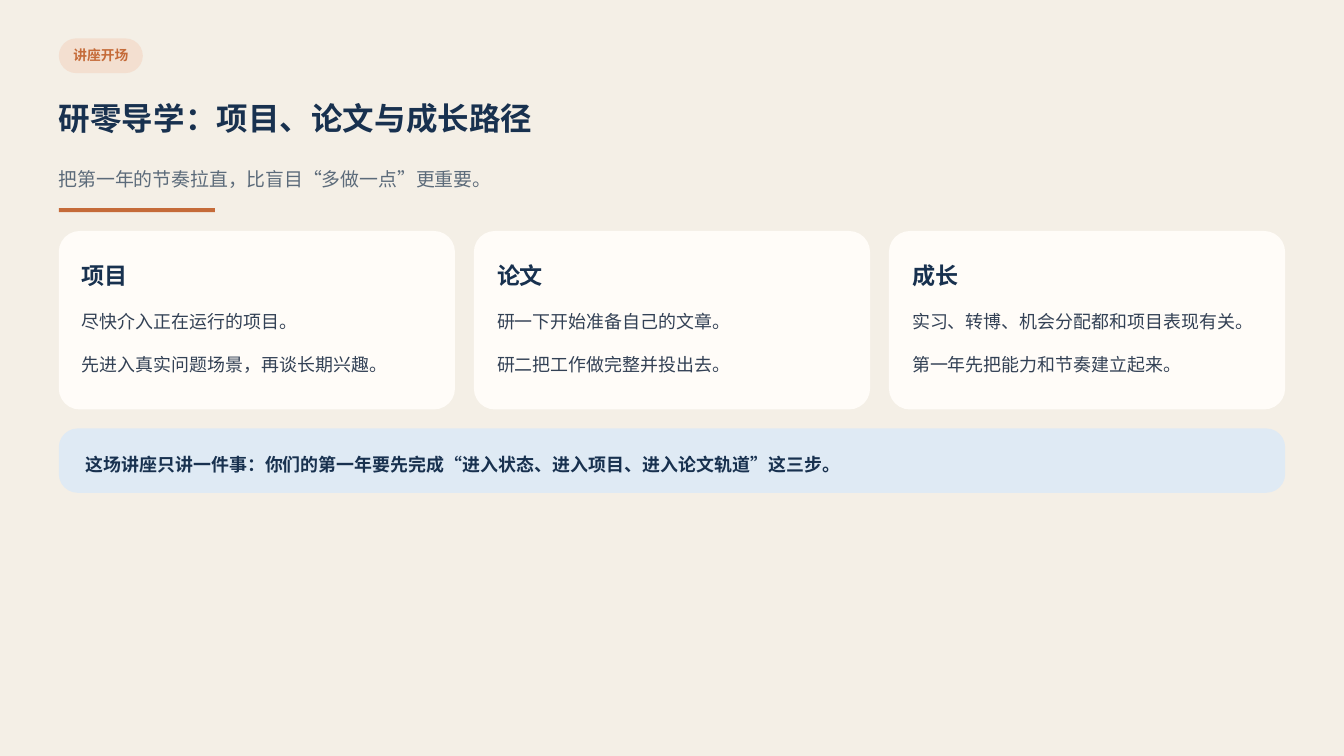
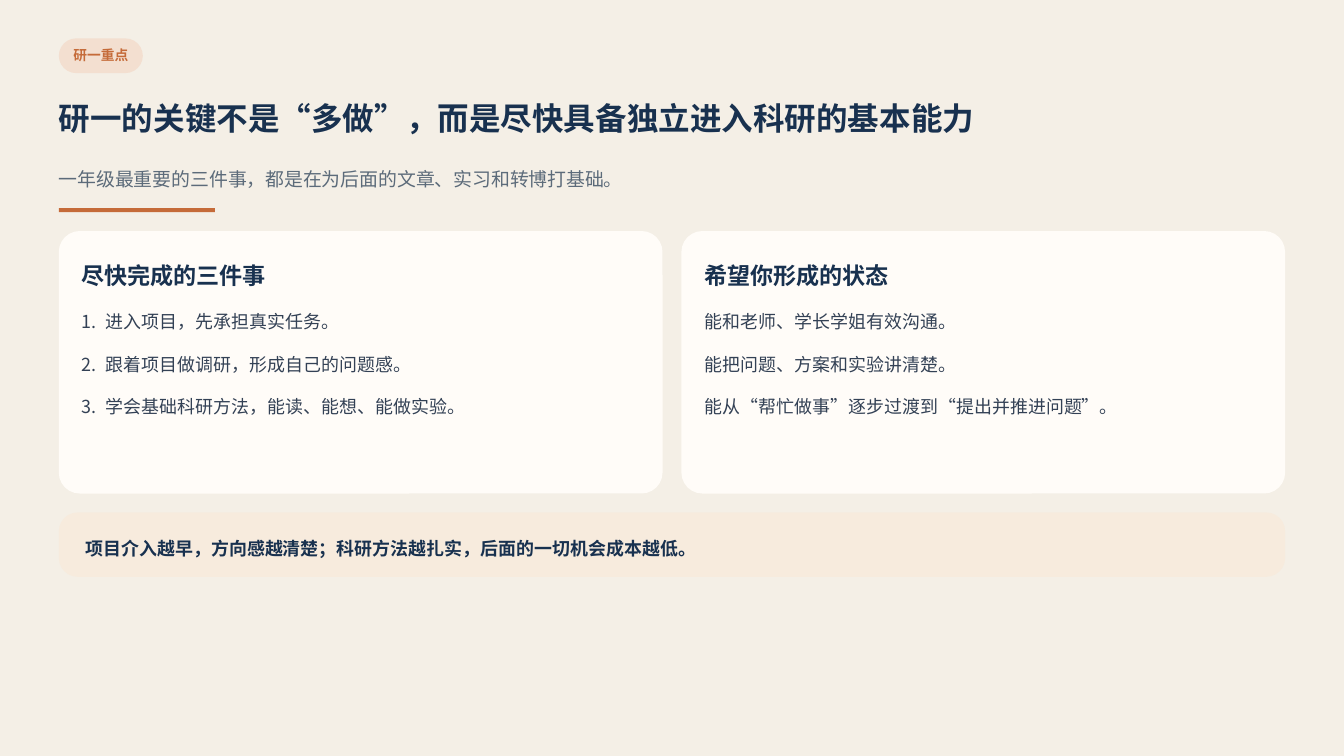
from pptx import Presentation
from pptx.dml.color import RGBColor
from pptx.enum.shapes import MSO_SHAPE
from pptx.enum.text import MSO_ANCHOR, MSO_AUTO_SIZE, PP_ALIGN
from pptx.oxml.ns import qn
from pptx.util import Pt

FONT = "Noto Sans CJK SC"
PAPER, CARD = "F4EFE6", "FFFCF8"
NAVY, SLATE, INK = "18314F", "5C6B7A", "334155"
ORANGE, PEACH = "C56B39", "F3DFD0"
BLUE_TINT, ORANGE_TINT = "DFEAF4", "F7EBDD"
LEFT, WIDTH, GAP = 42, 876, 13.5
CARD_TOP, CARD_PADDING = 165, 16.5
CALLOUT_HEIGHT = 46


def color(value):
    """Turn a hex string into a colour."""
    return RGBColor.from_string(value)


class Deck:
    """Hold the shared style and the current slide."""

    def __init__(self):
        """Start a widescreen presentation on a paper background."""
        self.presentation = Presentation()
        self.presentation.slide_width = Pt(960)
        self.presentation.slide_height = Pt(540)
        fill = self.presentation.slide_master.background.fill
        fill.solid()
        fill.fore_color.rgb = color(PAPER)
        self.slide = None

    def fill_text(self, shape, lines, size, text_color, bold=False, spacing=1.0,
                  margins=(0, 0, 0, 0), anchor=MSO_ANCHOR.TOP,
                  align=PP_ALIGN.LEFT, numbered=False):
        """Fill a shape with one paragraph for each line."""
        frame = shape.text_frame
        frame.word_wrap = True
        frame.auto_size = MSO_AUTO_SIZE.NONE
        frame.vertical_anchor = anchor
        (frame.margin_left, frame.margin_top,
         frame.margin_right, frame.margin_bottom) = map(Pt, margins)
        frame.text = "\n".join(lines)
        for paragraph in frame.paragraphs:
            paragraph.alignment = align
            paragraph.line_spacing = spacing
            if numbered:
                self.number(paragraph)
            for run in paragraph.runs:
                run.font.name = FONT
                run.font.size = Pt(size)
                run.font.bold = bold
                run.font.color.rgb = color(text_color)
                properties = run._r.get_or_add_rPr()
                properties.append(properties.makeelement(qn("a:ea"), {"typeface": FONT}))

    def number(self, paragraph):
        """Give a paragraph automatic numbering with a hanging indent."""
        properties = paragraph._p.get_or_add_pPr()
        properties.set("marL", str(Pt(17)))
        properties.set("indent", str(-Pt(17)))
        properties.append(properties.makeelement(qn("a:buAutoNum"), {"type": "arabicPeriod"}))

    def text(self, left, top, width, height, lines, size, text_color, **style):
        """Add a text box."""
        box = self.slide.shapes.add_textbox(Pt(left), Pt(top), Pt(width), Pt(height))
        self.fill_text(box, lines, size, text_color, **style)

    def panel(self, left, top, width, height, fill, radius=0):
        """Add a flat rectangle, rounded when it has a radius."""
        kind = MSO_SHAPE.ROUNDED_RECTANGLE if radius else MSO_SHAPE.RECTANGLE
        shape = self.slide.shapes.add_shape(kind, Pt(left), Pt(top), Pt(width), Pt(height))
        if radius:
            shape.adjustments[0] = radius / min(width, height)
        shape.shadow.inherit = False
        shape.fill.solid()
        shape.fill.fore_color.rgb = color(fill)
        shape.line.fill.background()
        return shape

    def start(self, tag, title, subtitle):
        """Add a slide with its tag, title, subtitle and accent rule."""
        self.slide = self.presentation.slides.add_slide(self.presentation.slide_layouts[5])
        pill = self.panel(LEFT, 27.4, 60, 24.8, PEACH, radius=12.4)
        self.fill_text(pill, [tag], 9.8, ORANGE, bold=True, margins=(0, 0, 0, 1),
                       anchor=MSO_ANCHOR.MIDDLE, align=PP_ALIGN.CENTER)
        heading = self.slide.shapes.title
        heading.left, heading.top = Pt(LEFT), Pt(65.5)
        heading.width, heading.height = Pt(WIDTH), Pt(32.4)
        self.fill_text(heading, [title], 22.5, NAVY, bold=True, spacing=1.2)
        self.text(LEFT, 111.6, WIDTH, 24.3, [subtitle], 13.5, SLATE, spacing=1.5)
        self.panel(LEFT, 148.7, 111.5, 2.8, ORANGE)

    def cards(self, height, cards, numbered=()):
        """Add a row of equal cards and return its bottom edge."""
        width = (WIDTH - GAP * (len(cards) - 1)) / len(cards)
        inner_width = width - 2 * CARD_PADDING
        for index, (heading, lines) in enumerate(cards):
            left = LEFT + index * (width + GAP)
            inner_left = left + CARD_PADDING
            self.panel(left, CARD_TOP, width, height, CARD, radius=15)
            self.text(inner_left, CARD_TOP + CARD_PADDING, inner_width, 24.8,
                      [heading], 16.5, NAVY, bold=True, spacing=1.25)
            self.text(inner_left, CARD_TOP + 42, inner_width, 30.4 * len(lines),
                      lines, 12.8, INK, spacing=Pt(30.4), numbered=index in numbered)
        return CARD_TOP + height

    def callout(self, bottom, message, fill):
        """Add the closing message below the cards."""
        shape = self.panel(LEFT, bottom + GAP, WIDTH, CALLOUT_HEIGHT, fill, radius=13.5)
        self.fill_text(shape, [message], 12.8, NAVY, bold=True, margins=(15, 5, 15, 0),
                       anchor=MSO_ANCHOR.MIDDLE)


def main():
    """Build and save both slides."""
    deck = Deck()

    deck.start("讲座开场", "研零导学：项目、论文与成长路径",
               "把第一年的节奏拉直，比盲目“多做一点”更重要。")
    bottom = deck.cards(127.5, [
        ("项目", ["尽快介入正在运行的项目。", "先进入真实问题场景，再谈长期兴趣。"]),
        ("论文", ["研一下开始准备自己的文章。", "研二把工作做完整并投出去。"]),
        ("成长", ["实习、转博、机会分配都和项目表现有关。", "第一年先把能力和节奏建立起来。"]),
    ])
    deck.callout(bottom, "这场讲座只讲一件事：你们的第一年要先完成“进入状态、进入项目、进入论文轨道”这三步。",
                 BLUE_TINT)

    deck.start("研一重点", "研一的关键不是“多做”，而是尽快具备独立进入科研的基本能力",
               "一年级最重要的三件事，都是在为后面的文章、实习和转博打基础。")
    bottom = deck.cards(187.5, [
        ("尽快完成的三件事", ["进入项目，先承担真实任务。", "跟着项目做调研，形成自己的问题感。",
                      "学会基础科研方法，能读、能想、能做实验。"]),
        ("希望你形成的状态", ["能和老师、学长学姐有效沟通。", "能把问题、方案和实验讲清楚。",
                      "能从“帮忙做事”逐步过渡到“提出并推进问题”。"]),
    ], numbered=(0,))
    deck.callout(bottom, "项目介入越早，方向感越清楚；科研方法越扎实，后面的一切机会成本越低。", ORANGE_TINT)

    deck.presentation.save("out.pptx")


if __name__ == "__main__":
    main()
